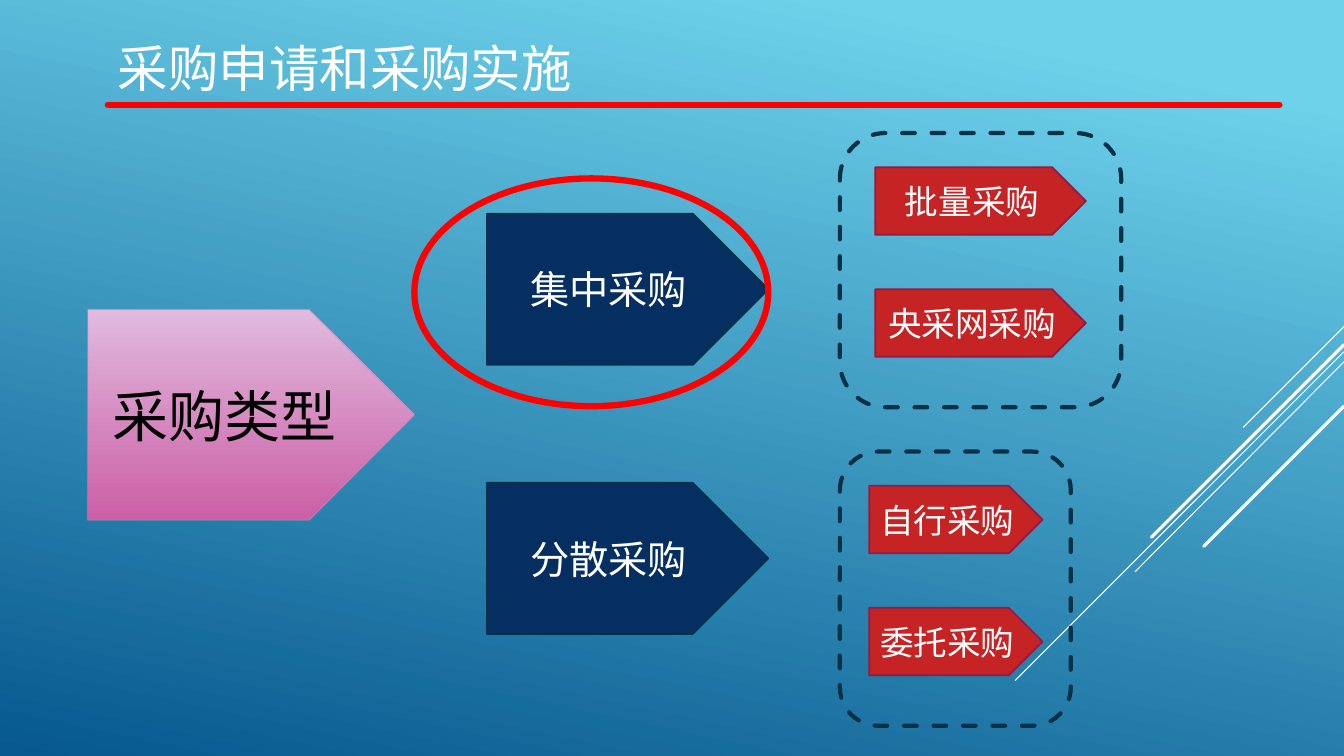
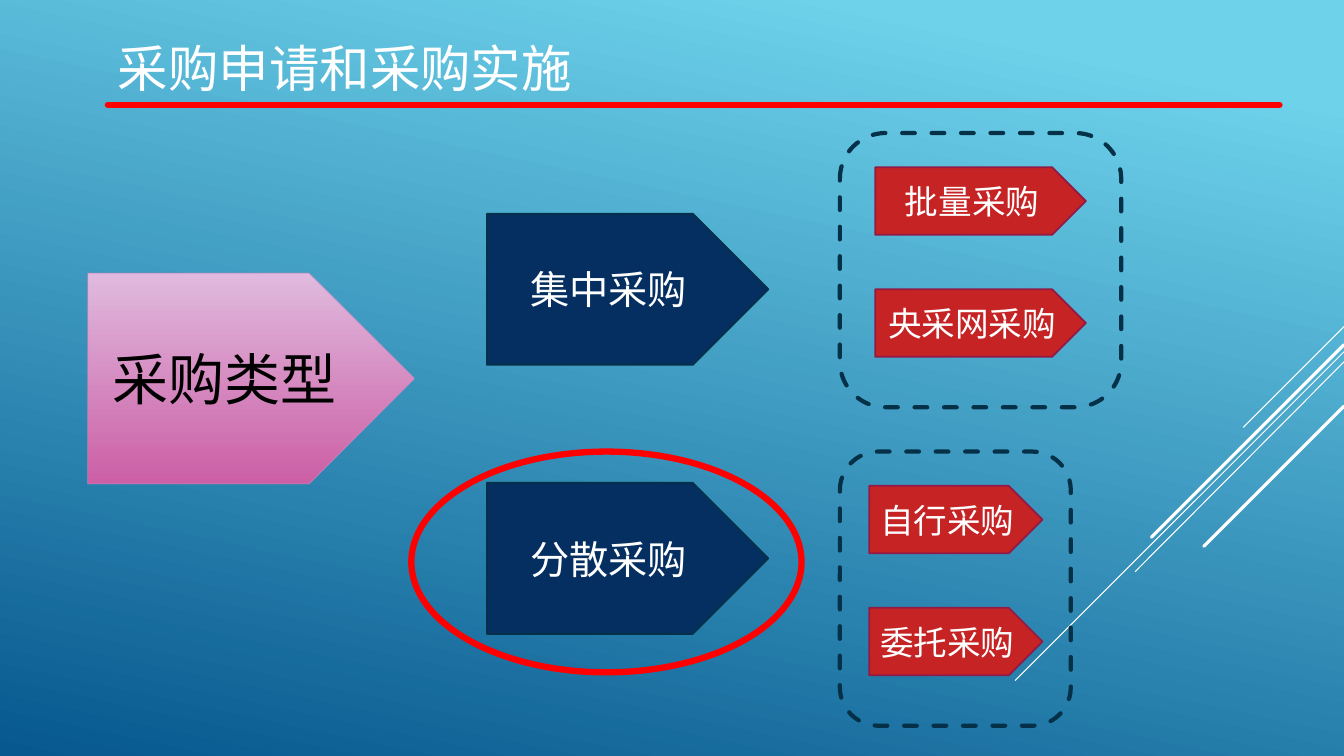
from lxml import etree
from pptx import Presentation
from pptx.dml.color import RGBColor
from pptx.enum.dml import MSO_LINE
from pptx.enum.shapes import MSO_CONNECTOR, MSO_SHAPE
from pptx.enum.text import MSO_ANCHOR, MSO_AUTO_SIZE, PP_ALIGN
from pptx.oxml.ns import qn
from pptx.util import Pt

PX = 9144
WIDTH, HEIGHT = 1333, 750
FONT = "Quicksand"
WHITE, BLACK, RED = "FFFFFF", "000000", "FF0000"
NAVY, NAVY_EDGE = "052F61", "043148"
CRIMSON, CRIMSON_EDGE = "C62324", "921A46"
PINK, PINK_EDGE = ("E0BADE", "CC5FA5"), "C089BD"
SKY = ("6ED2EB", "06588E")

PENTAGON, OVAL = MSO_SHAPE.PENTAGON, MSO_SHAPE.OVAL
ROUND_RECT = MSO_SHAPE.ROUNDED_RECTANGLE
STRAIGHT, DASH = MSO_CONNECTOR.STRAIGHT, MSO_LINE.DASH
MIDDLE, NO_FIT = MSO_ANCHOR.MIDDLE, MSO_AUTO_SIZE.NONE
LEFT, CENTER = PP_ALIGN.LEFT, PP_ALIGN.CENTER

TITLE = "采购申请和采购实施"
RAYS = [
    (324, 1233, 424, 0.75),
    (349, 1007, 675, 0.75),
    (359, 1126, 567, 0.75),
    (342, 1142, 533, 2.25),
    (403, 1194, 542, 2.25),
]
STAGES = [("集中采购", 212), ("分散采购", 479)]
METHODS = [
    (132, 279, 35, 209, ["批量采购", "央采网采购"]),
    (448, 229, 29, 172, ["自行采购", "委托采购"]),
]
SLIDES = [
    (307, (411, 177, 351, 226)),
    (271, (408, 448, 387, 219)),
]


def emu(*lengths):
    return [n * PX for n in lengths]


def rgb(color):
    return RGBColor.from_string(color)


def set_gradient(fill, colors, angle, start=0):
    fill.gradient()
    fill.gradient_angle = angle
    for stop, color, position in zip(fill.gradient_stops, colors, (start, 1)):
        stop.color.rgb = rgb(color)
        stop.position = position


def set_line(line, color, width, dash=None, opacity=None):
    line.color.rgb = rgb(color)
    line.width = Pt(width)
    if dash:
        line.dash_style = dash
    ln = line._get_or_add_ln()
    ln.set("cap", "rnd")
    if opacity:
        alpha = etree.SubElement(ln.find(".//" + qn("a:srgbClr")), qn("a:alpha"))
        alpha.set("val", str(opacity * 1000))


def set_text(tf, text, size, color=WHITE, align=CENTER, inset=5):
    tf.word_wrap = True
    tf.auto_size = NO_FIT
    tf.vertical_anchor = MIDDLE
    tf.margin_left = tf.margin_right = inset * PX
    p = tf.paragraphs[0]
    p.alignment = align
    r = p.add_run()
    r.text = text
    r.font.size = Pt(size)
    r.font.name = FONT
    r.font.color.rgb = rgb(color)
    etree.SubElement(r.font._element, qn("a:ea")).set("typeface", FONT)


def add_line(shapes, x1, y1, x2, y2, color, width):
    line = shapes.add_connector(STRAIGHT, *emu(x1, y1, x2, y2))
    set_line(line.line, color, width)
    etree.SubElement(line._element.spPr, qn("a:effectLst"))


def add_shape(shapes, kind, box, color, width, fill=None, **line_format):
    sp = shapes.add_shape(kind, *emu(*box))
    sp.shadow.inherit = False
    if fill is None:
        sp.fill.background()
    elif isinstance(fill, tuple):
        set_gradient(sp.fill, fill, 270)
    else:
        sp.fill.solid()
        sp.fill.fore_color.rgb = rgb(fill)
    set_line(sp.line, color, width, **line_format)
    return sp


def add_rays(s):
    rays = s.shapes.add_group_shape().shapes
    for y1, x2, y2, width in RAYS:
        add_line(rays, WIDTH, y1, x2, y2, WHITE, width)


def add_title(s):
    title = s.shapes.title
    title.left, title.top, title.width, title.height = emu(107, 12, 1083, 109)
    set_text(title.text_frame, TITLE, 36, align=LEFT, inset=10)
    add_line(s.shapes, 107, 104, 1269, 104, RED, 4.5)


def add_methods(s, top, width, indent, chip_width, names):
    shapes = s.shapes.add_group_shape().shapes
    left = 833
    for i, name in enumerate(names):
        box = (left + indent, top + 34 + 121 * i, chip_width, 67)
        chip = add_shape(shapes, PENTAGON, box, CRIMSON_EDGE, 1.25, CRIMSON)
        set_text(chip.text_frame, name, 24)
    add_shape(shapes, ROUND_RECT, (left, top, width, 272), NAVY_EDGE, 3, dash=DASH)


def add_slide(prs, root_top, ring_box):
    s = prs.slides.add_slide(prs.slide_layouts.get_by_name("Title Only"))
    add_rays(s)
    add_title(s)
    root = add_shape(s.shapes, PENTAGON, (87, root_top, 324, 209),
                     PINK_EDGE, 0.75, PINK, opacity=60)
    set_text(root.text_frame, "采购类型", 40, color=BLACK)
    for name, top in STAGES:
        stage = add_shape(s.shapes, PENTAGON, (483, top, 279, 150),
                          NAVY_EDGE, 1.25, NAVY)
        set_text(stage.text_frame, name, 28)
    for method in METHODS:
        add_methods(s, *method)
    add_shape(s.shapes, OVAL, ring_box, RED, 4.5)


def main():
    prs = Presentation()
    prs.slide_width, prs.slide_height = emu(WIDTH, HEIGHT)
    set_gradient(prs.slide_master.background.fill, SKY, 258, start=0.1)
    for root_top, ring_box in SLIDES:
        add_slide(prs, root_top, ring_box)
    prs.save("out.pptx")


if __name__ == "__main__":
    main()
